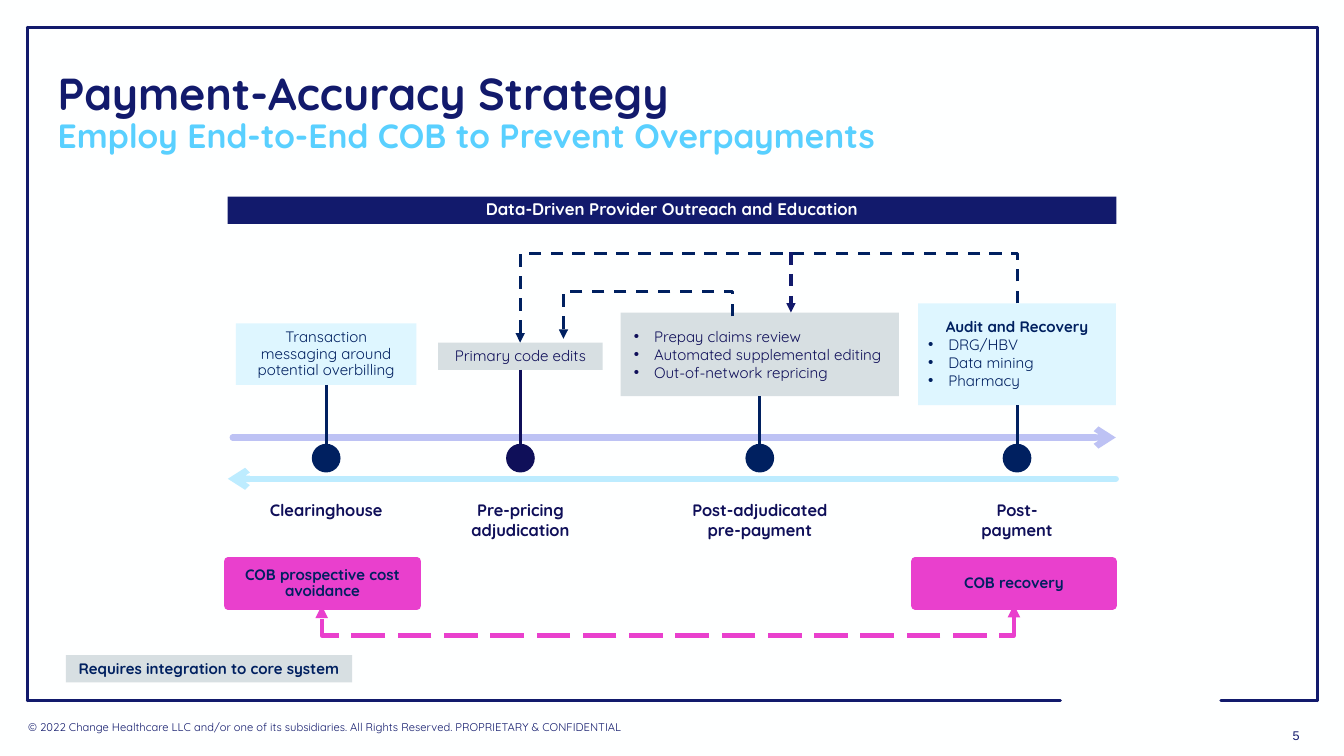
"""Build the payment-accuracy strategy slide with its claim timeline."""
from lxml.etree import SubElement
from pptx import Presentation
from pptx.dml.color import RGBColor
from pptx.enum.dml import MSO_LINE
from pptx.enum.shapes import MSO_CONNECTOR, MSO_SHAPE
from pptx.enum.text import MSO_ANCHOR, PP_ALIGN
from pptx.oxml.ns import qn
from pptx.util import Pt

COLORS = {
    "page": "FEFFFF", "navy": "121A6C", "deep": "002060", "ink": "0F0F59",
    "sky": "59D0FF", "pale": "DEF6FF", "gray": "D7DFE2", "pink": "E940CD",
    "aqua": "BDECFF", "lilac": "BDC2F4",
}
FONT = "Quicksand"
TITLE = [("Payment-Accuracy Strategy", 32, "navy"),
         ("Employ End-to-End COB to Prevent Overpayments", 24, "sky")]
FOOTER = ("© 2022 Change Healthcare LLC and/or one of its subsidiaries.\u00a0"
          "All Rights Reserved. PROPRIETARY & CONFIDENTIAL")
BANNER = "Data-Driven Provider Outreach and Education"
LEGEND = "Requires integration to core system"

STAGES = [
    dict(center=233, width=129, top=231, height=44, fill="pale", color="deep",
         heading="Transaction messaging around potential overbilling", bullets=(),
         bold=False, label="Clearinghouse", label_width=98.5, stem="deep"),
    dict(center=371.75, width=117.5, top=244.75, height=19.5, fill="gray", color="ink",
         heading="Primary code edits", bullets=(),
         bold=False, label="Pre-pricing adjudication", label_width=88.5, stem="ink"),
    dict(center=542.75, width=198.75, top=223.25, height=59.75, fill="gray", color="ink",
         heading="", bullets=("Prepay claims review", "Automated supplemental editing",
                              "Out-of-network repricing"),
         bold=False, label="Post-adjudicated pre-payment", label_width=118, stem="deep"),
    dict(center=726.5, width=141.25, top=216.75, height=72.75, fill="pale", color="deep",
         heading="Audit and Recovery", bullets=("DRG/HBV", "Data mining", "Pharmacy"),
         bold=True, label="Post-payment", label_width=70.5, stem="deep"),
]
COB_BOXES = [("COB prospective cost avoidance", 162.75, 135.25),
             ("COB recovery", 653.75, 141)]
FRAME = dict(left=19.5, top=19.5, right=941, bottom=500.5)
FOOT_GAP = (757.5, 872)
TIMELINES = [((797, 342), (162.75, 342), "aqua"), ((166.25, 312.5), (797, 312.5), "lilac")]
DOT_SIZE, DOT_TOP, LABEL_TOP, COB_TOP = 19.5, 317.5, 353.5, 401

deck = Presentation()
deck.slide_width, deck.slide_height = Pt(960), Pt(540)
page = deck.slides.add_slide(deck.slide_layouts[5])


def color_of(name):
    return RGBColor.from_string(COLORS[name])


def write(shape, heading, bullets=(), size=10.8, color="deep", bold=False, font=FONT,
          align=PP_ALIGN.CENTER, anchor=MSO_ANCHOR.MIDDLE, spacing=Pt(11.7), inset=7.2):
    frame = shape.text_frame
    frame.word_wrap = True
    frame.vertical_anchor = anchor
    frame.margin_left = Pt(inset)
    lines = ([(heading, False)] if heading else []) + [(text, True) for text in bullets]
    for index, (text, bulleted) in enumerate(lines):
        para = frame.paragraphs[0] if index == 0 else frame.add_paragraph()
        if bulleted:
            properties = para._p.get_or_add_pPr()
            properties.set("marL", str(Pt(14.4)))
            properties.set("indent", str(-Pt(14.4)))
            SubElement(properties, qn("a:buFont")).set("typeface", "Arial")
            SubElement(properties, qn("a:buChar")).set("char", "•")
        para.alignment = PP_ALIGN.LEFT if bulleted else align
        para.line_spacing = 1.0 if bulleted else spacing
        span = para.add_run()
        span.text = text
        span.font.name, span.font.size = font, Pt(size)
        span.font.bold = bold and not bulleted
        span.font.color.rgb = color_of(color)


def add_shape(left, top, width, height, fill, kind=MSO_SHAPE.RECTANGLE, outline=0):
    shape = page.shapes.add_shape(kind, Pt(left), Pt(top), Pt(width), Pt(height))
    shape.shadow.inherit = False
    shape.fill.solid()
    shape.fill.fore_color.rgb = color_of(fill)
    if outline:
        shape.line.color.rgb = color_of(fill)
        shape.line.width = Pt(outline)
    else:
        shape.line.fill.background()
    return shape


def add_text(left, top, width, height, text, **style):
    box = page.shapes.add_textbox(Pt(left), Pt(top), Pt(width), Pt(height))
    write(box, text, **style)


def add_line(start, end, color, width, kind=MSO_CONNECTOR.STRAIGHT,
             dash=None, head=None, tail=None, cap="flat"):
    line = page.shapes.add_connector(kind, *(Pt(value) for value in (*start, *end)))
    line.line.color.rgb = color_of(color)
    line.line.width = Pt(width)
    if dash:
        line.line.dash_style = dash
    stroke = line.line._get_or_add_ln()
    stroke.set("cap", cap)
    for tag, style in (("a:headEnd", head), ("a:tailEnd", tail)):
        if style:
            SubElement(stroke, qn(tag)).set("type", style)
    SubElement(line._element.spPr, qn("a:effectLst"))
    return line


def add_loop(start, end, bend, color, width, **style):
    """Join right start to lower left end by way of the height bend."""
    across, drop = start[0] - end[0], end[1] - start[1]
    middle_x, middle_y = (start[0] + end[0]) / 2, (start[1] + end[1]) / 2
    loop = add_line((middle_x - drop / 2, middle_y - across / 2),
                    (middle_x + drop / 2, middle_y + across / 2),
                    color, width, kind=MSO_CONNECTOR.ELBOW, **style)
    outline = loop._element.spPr
    outline.find(qn("a:xfrm")).set("rot", "5400000")
    geometry = outline.find(qn("a:prstGeom"))
    guides = geometry.find(qn("a:avLst"))
    if guides is None:
        guides = SubElement(geometry, qn("a:avLst"))
    guide = SubElement(guides, qn("a:gd"))
    guide.set("name", "adj1")
    guide.set("fmla", f"val {round((bend - start[1]) / drop * 100000)}")


def add_title():
    title = page.shapes.title
    title.left, title.top, title.width, title.height = Pt(34), Pt(29), Pt(893), Pt(104.5)
    title.text_frame.word_wrap = True
    title.text_frame.vertical_anchor = MSO_ANCHOR.MIDDLE
    para = title.text_frame.paragraphs[0]
    para.alignment, para.line_spacing = PP_ALIGN.LEFT, 0.9
    for index, (text, size, color) in enumerate(TITLE):
        if index:
            para.add_line_break()
        span = para.add_run()
        span.text = text
        span.font.name, span.font.size, span.font.bold = FONT, Pt(size), True
        span.font.color.rgb = color_of(color)


def add_frame():
    left, top, right, bottom = (FRAME[side] for side in ("left", "top", "right", "bottom"))
    for start, end in [((left, top), (right, top)), ((right, top), (right, bottom)),
                       ((left, top), (left, bottom)), ((left, bottom), (FOOT_GAP[0], bottom)),
                       ((FOOT_GAP[1], bottom), (right, bottom))]:
        add_line(start, end, "navy", 2, cap="rnd")
    add_text(13, 511, 469.5, 17.5, FOOTER, size=8, color="navy", align=PP_ALIGN.LEFT,
             anchor=MSO_ANCHOR.TOP, spacing=1.0)
    add_text(911, 510, 29.5, 30, "5", size=9, color="navy", font="Arial", spacing=1.0)


def add_stage(stage):
    center, width = stage["center"], stage["width"]
    box = add_shape(center - width / 2, stage["top"], width, stage["height"], stage["fill"])
    write(box, stage["heading"], stage["bullets"], color=stage["color"], bold=stage["bold"],
          inset=7.2 if stage["heading"] else 9.4)
    dot = add_shape(center - DOT_SIZE / 2, DOT_TOP, DOT_SIZE, DOT_SIZE, stage["stem"],
                    kind=MSO_SHAPE.OVAL, outline=1)
    stem = add_line((center, stage["top"] + stage["height"]), (center, DOT_TOP),
                    stage["stem"], 2.25)
    stem.begin_connect(box, 2)
    stem.end_connect(dot, 0)
    add_text(center - stage["label_width"] / 2, LABEL_TOP, stage["label_width"], 36,
             stage["label"], size=11.8, color="ink", bold=True,
             anchor=MSO_ANCHOR.TOP, spacing=1.0)


def main():
    page.background.fill.solid()
    page.background.fill.fore_color.rgb = color_of("page")
    add_frame()
    add_title()
    write(add_shape(162.5, 140.5, 635, 19.5, "navy"), BANNER, size=12, color="page", bold=True)
    write(add_shape(47, 468, 204.5, 19.5, "gray"), LEGEND, bold=True)
    for start, end, color in TIMELINES:
        add_line(start, end, color, 4.5, tail="arrow", cap="rnd")
    for stage in STAGES:
        add_stage(stage)
    for text, left, width in COB_BOXES:
        write(add_shape(left, COB_TOP, width, 31.5, "pink", outline=6), text, bold=True)
    add_loop((724.25, 432), (229.75, 432.5), 453.5, "pink", 3,
             dash=MSO_LINE.LONG_DASH, head="triangle", tail="triangle")
    dashed = dict(dash=MSO_LINE.DASH, tail="triangle")
    add_loop((523.5, 226), (402.5, 242), 208, "deep", 2.25, **dashed)
    add_loop((727, 216.75), (371.5, 244.75), 181, "deep", 2.25, **dashed)
    add_line((565, 180), (565, 223.25), "navy", 2.25, **dashed)
    deck.save("out.pptx")


if __name__ == "__main__":
    main()
